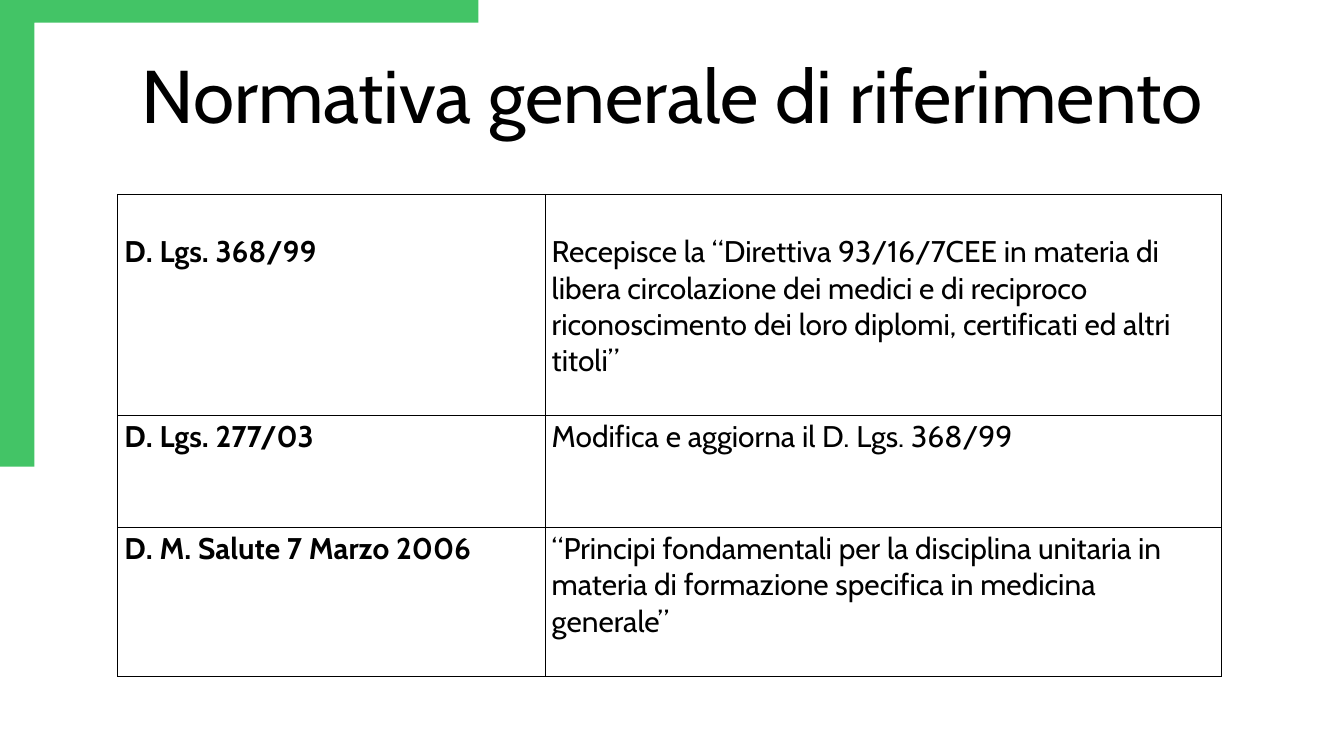
from lxml import etree
from pptx import Presentation
from pptx import util as u
from pptx.dml.color import RGBColor
from pptx.enum import text
from pptx.oxml import ns

FONT = "Cabin"
GREEN = "43C466"
BLACK = "000000"
COLUMNS = [16.15, 25.55]
ROWS = [8.35, 4.23, 5.64]
LAWS = [
    ("D. Lgs. 368/99",
     "Recepisce la “Direttiva 93/16/7CEE in materia di libera circolazione dei medici "
     "e di reciproco riconoscimento dei loro diplomi, certificati ed altri titoli”"),
    ("D. Lgs. 277/03", "Modifica e aggiorna il D. Lgs. 368/99"),
    ("D. M. Salute 7 Marzo 2006",
     "“Principi fondamentali per la disciplina unitaria in materia di formazione "
     "specifica in medicina generale”"),
]


def colour(value):
    """Turn a hex string into a colour."""
    return RGBColor.from_string(value)


def apply(target, values):
    """Set every attribute of a dict on the target."""
    for name, value in values.items():
        setattr(target, name, value)


def write(frame, wording, size, bold=False):
    """Write one formatted paragraph into a text frame and return it."""
    paragraph = frame.paragraphs[0]
    run = paragraph.add_run()
    run.text = wording
    apply(run.font, {"name": FONT, "size": u.Pt(size), "bold": bold})
    run.font.color.rgb = colour(BLACK)
    return paragraph


def add_heading(slide, wording):
    """Place the slide title."""
    heading = slide.shapes.title
    apply(heading, {"left": u.Cm(3.18), "top": u.Cm(1.85),
                    "width": u.Cm(44.45), "height": u.Cm(3.12)})
    margins = dict.fromkeys(
        ("margin_left", "margin_top", "margin_right", "margin_bottom"), 0)
    apply(heading.text_frame, {**margins, "word_wrap": True,
                               "auto_size": text.MSO_AUTO_SIZE.NONE,
                               "vertical_anchor": text.MSO_ANCHOR.TOP})
    write(heading.text_frame, wording, 80).alignment = text.PP_ALIGN.CENTER


def add_corner(slide, left, top, side, band):
    """Draw the L-shaped band around the top left corner."""
    right, bottom = left + side, top + side
    inner_left, inner_top = left + band, top + band
    outline = [(right, top), (right, inner_top), (inner_left, inner_top),
               (inner_left, bottom), (left, bottom)]
    builder = slide.shapes.build_freeform(u.Cm(left), u.Cm(top))
    builder.add_line_segments([(u.Cm(x), u.Cm(y)) for x, y in outline])
    corner = builder.convert_to_shape()
    corner.shadow.inherit = False
    corner.fill.solid()
    corner.fill.fore_color.rgb = colour(GREEN)
    corner.line.fill.background()


def add_borders(cell):
    """Give a cell thin black borders on all sides."""
    properties = cell._tc.get_or_add_tcPr()
    for position, side in enumerate(("lnL", "lnR", "lnT", "lnB")):
        line = etree.Element(ns.qn(f"a:{side}"), w=str(u.Pt(1)))
        fill = etree.SubElement(line, ns.qn("a:solidFill"))
        etree.SubElement(fill, ns.qn("a:srgbClr"), val=BLACK)
        properties.insert(position, line)


def add_laws(slide, laws):
    """Add the table of laws and their contents."""
    table = slide.shapes.add_table(
        len(ROWS), len(COLUMNS), u.Cm(4.45), u.Cm(7.34),
        u.Cm(sum(COLUMNS)), u.Cm(sum(ROWS))).table
    apply(table, {"first_row": False, "horz_banding": False})
    for column, width in zip(table.columns, COLUMNS):
        column.width = u.Cm(width)
    for index, (row, height, law) in enumerate(zip(table.rows, ROWS, laws)):
        row.height = u.Cm(height)
        for cell, wording in zip(row.cells, law):
            cell.fill.background()
            cell.margin_top = u.Cm(0.13 if index else 1.5)
            write(cell.text_frame, wording, 32, bold=wording == law[0])
            add_borders(cell)


def main():
    """Build and save the slide."""
    deck = Presentation()
    apply(deck, {"slide_width": u.Cm(50.8), "slide_height": u.Cm(28.58)})
    slide = deck.slides.add_slide(deck.slide_layouts.get_by_name("Title Only"))
    add_heading(slide, "Normativa generale di riferimento")
    add_corner(slide, left=-0.2, top=-0.64, side=18.28, band=1.5)
    add_laws(slide, LAWS)
    deck.save("out.pptx")


if __name__ == "__main__":
    main()
